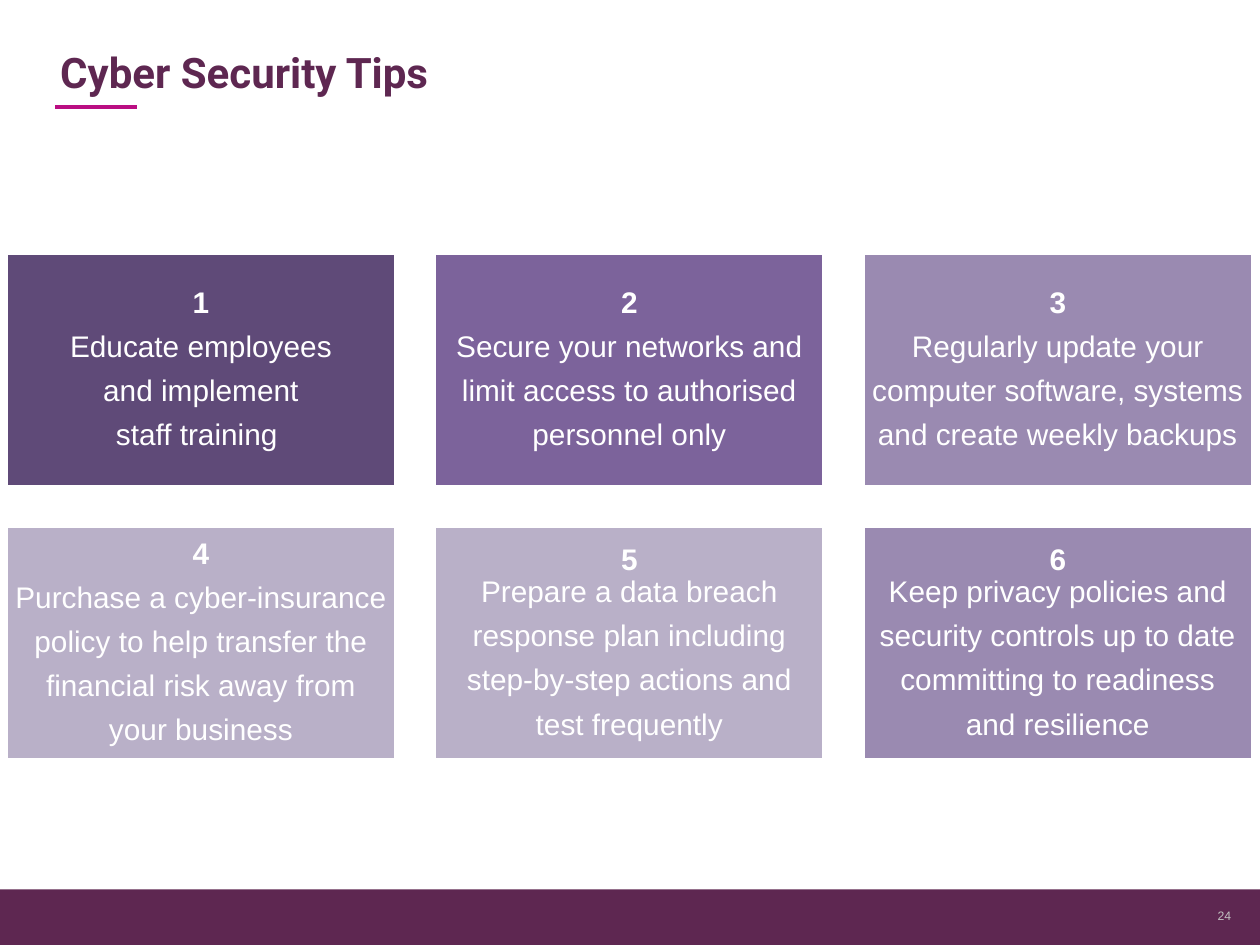
from lxml import etree
from pptx import Presentation
from pptx.dml.color import RGBColor
from pptx.enum.shapes import MSO_CONNECTOR, MSO_SHAPE
from pptx.enum.text import MSO_ANCHOR, PP_ALIGN
from pptx.oxml.ns import qn
from pptx.util import Inches, Pt

RECT = MSO_SHAPE.RECTANGLE
STRAIGHT = MSO_CONNECTOR.STRAIGHT
TOP, MIDDLE = MSO_ANCHOR.TOP, MSO_ANCHOR.MIDDLE
LEFT, CENTER, RIGHT = PP_ALIGN.LEFT, PP_ALIGN.CENTER, PP_ALIGN.RIGHT

WIDE, HIGH = 10, 7.5
COLS = 3
X0, Y0 = 0.05, 2.01
BOX_W, BOX_H = 3.09, 1.85
STEP_X, STEP_Y = 3.4, 2.17
PLUM, PINK, WHITE, GREY = "5E2751", "BA0E82", "FFFFFF", "C2C2C2"

# Fill, whether the number shares the first line's paragraph, lines of text
TIPS = [
    ("5F4A78", False, ["Educate employees", "and implement", "staff training "]),
    ("7C639B", False, ["Secure your networks and", "limit access to authorised",
                       "personnel only"]),
    ("9A8AB1", False, ["Regularly update your", "computer software, systems",
                       "and create weekly backups"]),
    ("B9B0C8", False, ["Purchase a cyber-insurance", "policy to help transfer the",
                       "financial risk away from", "your business"]),
    ("B9B0C8", True, ["Prepare a data breach", "response plan including",
                      "step-by-step actions and", "test frequently"]),
    ("9A8AB1", True, ["Keep privacy policies and", "security controls up to date",
                      "committing to readiness", "and resilience"]),
]


def tint(code):
    return RGBColor.from_string(code)


def put(item, **vals):
    for name, val in vals.items():
        setattr(item, name, val)


def write(para, text, color, **font):
    run = para.add_run()
    run.text = text
    put(run.font, **font)
    run.font.color.rgb = tint(color)


def pad(frame, inset, anchor):
    gap = Inches(inset)
    put(frame, word_wrap=True, vertical_anchor=anchor, margin_left=gap,
        margin_right=gap, margin_top=gap, margin_bottom=gap)


def block(slide, x, y, w, h, fill, edge=None):
    shape = slide.shapes.add_shape(RECT, *map(Inches, (x, y, w, h)))
    shape.shadow.inherit = False
    shape.fill.solid()
    shape.fill.fore_color.rgb = tint(fill)
    if edge:
        shape.line.color.rgb = tint(edge)
        shape.line.width = Pt(2)
    else:
        shape.line.fill.background()
    return shape


def label(slide, x, y, w, h, text, color, align=LEFT, **font):
    frame = slide.shapes.add_textbox(*map(Inches, (x, y, w, h))).text_frame
    frame.word_wrap = True
    para = frame.paragraphs[0]
    para.alignment = align
    write(para, text, color, **font)
    return frame


def rule(slide, x, y, w, color):
    line = slide.shapes.add_connector(
        STRAIGHT, *map(Inches, (x, y, x + w, y)))
    line.line.color.rgb = tint(color)
    line.line.width = Pt(2)
    etree.SubElement(line._element.spPr, qn("a:effectLst"))


def tip(slide, spot, fill, joined, lines):
    """Draw one numbered box at its place in the grid."""
    row, col = divmod(spot, COLS)
    box = block(slide, X0 + col * STEP_X, Y0 + row * STEP_Y,
                BOX_W, BOX_H, fill, WHITE)
    frame = box.text_frame
    pad(frame, 0.07, MIDDLE)
    font = {"name": "Arial", "size": Pt(17)}
    para = frame.paragraphs[0]
    write(para, str(spot + 1), WHITE, bold=True, **font)
    for i, text in enumerate(lines):
        if joined and i == 0:
            para.add_line_break()
        else:
            para = frame.add_paragraph()
        write(para, text, WHITE, bold=False, **font)
    for para in frame.paragraphs:
        put(para, alignment=CENTER, line_spacing=0.9, space_after=Pt(6.8))


def main():
    prs = Presentation()
    put(prs, slide_width=Inches(WIDE), slide_height=Inches(HIGH))
    slide = prs.slides.add_slide(prs.slide_layouts[6])

    block(slide, 0, HIGH - 0.44, WIDE, 0.44, PLUM)
    page = label(slide, 9.29, 7.14, 0.48, 0.25, "24", GREY, RIGHT,
                 name="Arial", size=Pt(7))
    pad(page, 0, MIDDLE)
    rule(slide, 0.44, 0.85, 0.65, PINK)
    label(slide, 0.38, 0.32, 7.07, 0.5, "Cyber Security Tips", PLUM,
          name="Roboto", size=Pt(24), bold=True)
    for spot, (fill, joined, lines) in enumerate(TIPS):
        tip(slide, spot, fill, joined, lines)

    prs.save("out.pptx")


if __name__ == "__main__":
    main()
